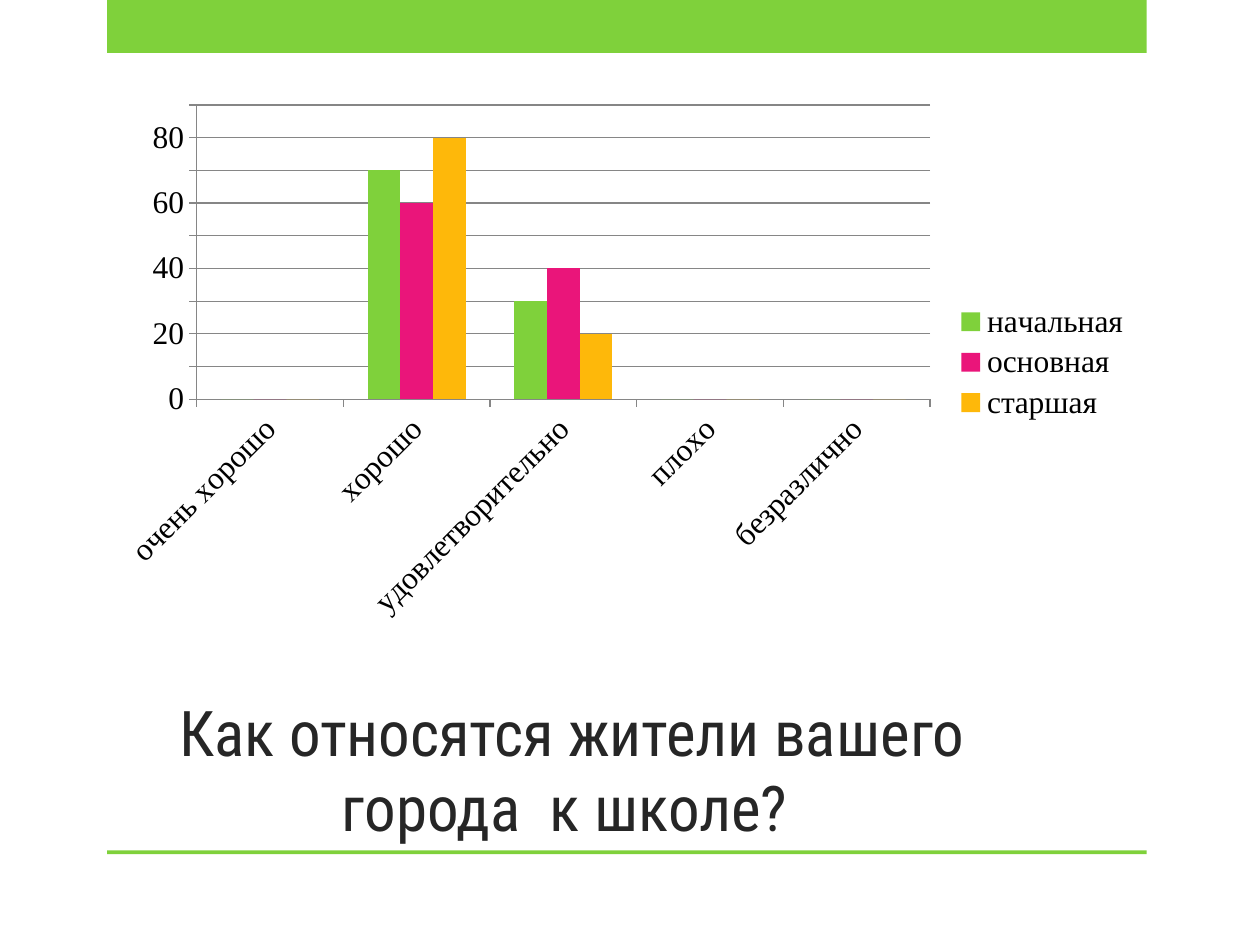
from pptx import Presentation
from pptx.chart.data import CategoryChartData as ChartData
from pptx.dml.color import RGBColor as RGB
from pptx.enum.chart import XL_CHART_TYPE as Kind, XL_LEGEND_POSITION as Spot
from pptx.enum.chart import XL_TICK_MARK as Tick
from pptx.enum.shapes import MSO_SHAPE as Shape
from pptx.enum.text import MSO_ANCHOR as Anchor, PP_ALIGN as Align
from pptx.util import Inches, Pt

COLORS = {
    "green": "7FD13B", "pink": "EA157A", "gold": "FEB80A",
    "grid": "868686", "ink": "262626", "black": "000000",
}
LEVELS = ["очень хорошо", "хорошо", "удовлетворительно", "плохо", "безразлично"]
GRADES = [
    ("начальная", "green", (0, 70, 30, 0, 0)),
    ("основная", "pink", (0, 60, 40, 0, 0)),
    ("старшая", "gold", (0, 80, 20, 0, 0)),
]


def color(name):
    return RGB.from_string(COLORS[name])


def add_bar(slide, x, y, w, h):
    bar = slide.shapes.add_shape(Shape.RECTANGLE, Inches(x), Inches(y), Inches(w), Inches(h))
    bar.shadow.inherit = False
    bar.fill.solid()
    bar.fill.fore_color.rgb = color("green")
    bar.line.fill.background()


def add_text(slide, text, box, size=36, font="Roboto Condensed", ink="ink",
             align=Align.CENTER, anchor=Anchor.BOTTOM):
    frame = slide.shapes.add_textbox(*map(Inches, box)).text_frame
    frame.word_wrap = True
    frame.vertical_anchor = anchor
    para = frame.paragraphs[0]
    para.alignment = align
    run = para.add_run()
    run.text = text
    run.font.size = Pt(size)
    run.font.name = font
    run.font.color.rgb = color(ink)


def draw_frame(slide, x, y, w, h):
    """Thick band on top, thin rule at the bottom of the box."""
    rule = 0.03
    add_bar(slide, x, y, w, 0.42)
    add_bar(slide, x, y + h - rule, w, rule)


def style_axis(axis):
    axis.major_tick_mark = Tick.OUTSIDE
    axis.minor_tick_mark = Tick.NONE
    axis.format.line.color.rgb = color("grid")


def draw_chart(slide, x, y, w, h):
    data = ChartData()
    data.categories = LEVELS
    for name, _, vals in GRADES:
        data.add_series(name, vals)
    box = map(Inches, (x, y, w, h))
    chart = slide.shapes.add_chart(Kind.COLUMN_CLUSTERED, *box, data).chart
    chart.has_title = False
    chart.font.name = "Times New Roman"
    chart.font.size = Pt(18)
    chart.font.color.rgb = color("black")

    # Columns
    plot = chart.plots[0]
    plot.gap_width = 150
    plot.overlap = 0
    plot.vary_by_categories = False
    for series, (_, fill, _) in zip(plot.series, GRADES):
        series.format.fill.solid()
        series.format.fill.fore_color.rgb = color(fill)

    # Axes, with slanted category names
    cats, vals = chart.category_axis, chart.value_axis
    style_axis(cats)
    style_axis(vals)
    cats.tick_labels.font.size = Pt(18)
    cats._element.txPr.bodyPr.set("rot", "-2700000")
    vals.minimum_scale, vals.maximum_scale, vals.major_unit = 0, 90, 10
    vals.has_major_gridlines = True
    vals.major_gridlines.format.line.color.rgb = color("grid")

    # Legend
    chart.has_legend = True
    chart.legend.position = Spot.RIGHT
    chart.legend.include_in_layout = False


def main():
    deck = Presentation()
    deck.slide_width, deck.slide_height = Inches(10), Inches(7.5)
    slide = deck.slides.add_slide(deck.slide_layouts[6])
    draw_frame(slide, 0.85, 0, 8.25, 6.78)
    add_text(slide, "Как относятся жители вашего города  к школе? ", (0.83, 5, 7.42, 1.75))
    draw_chart(slide, 0.83, 0.75, 8.25, 4.25)
    deck.save("out.pptx")


if __name__ == "__main__":
    main()
